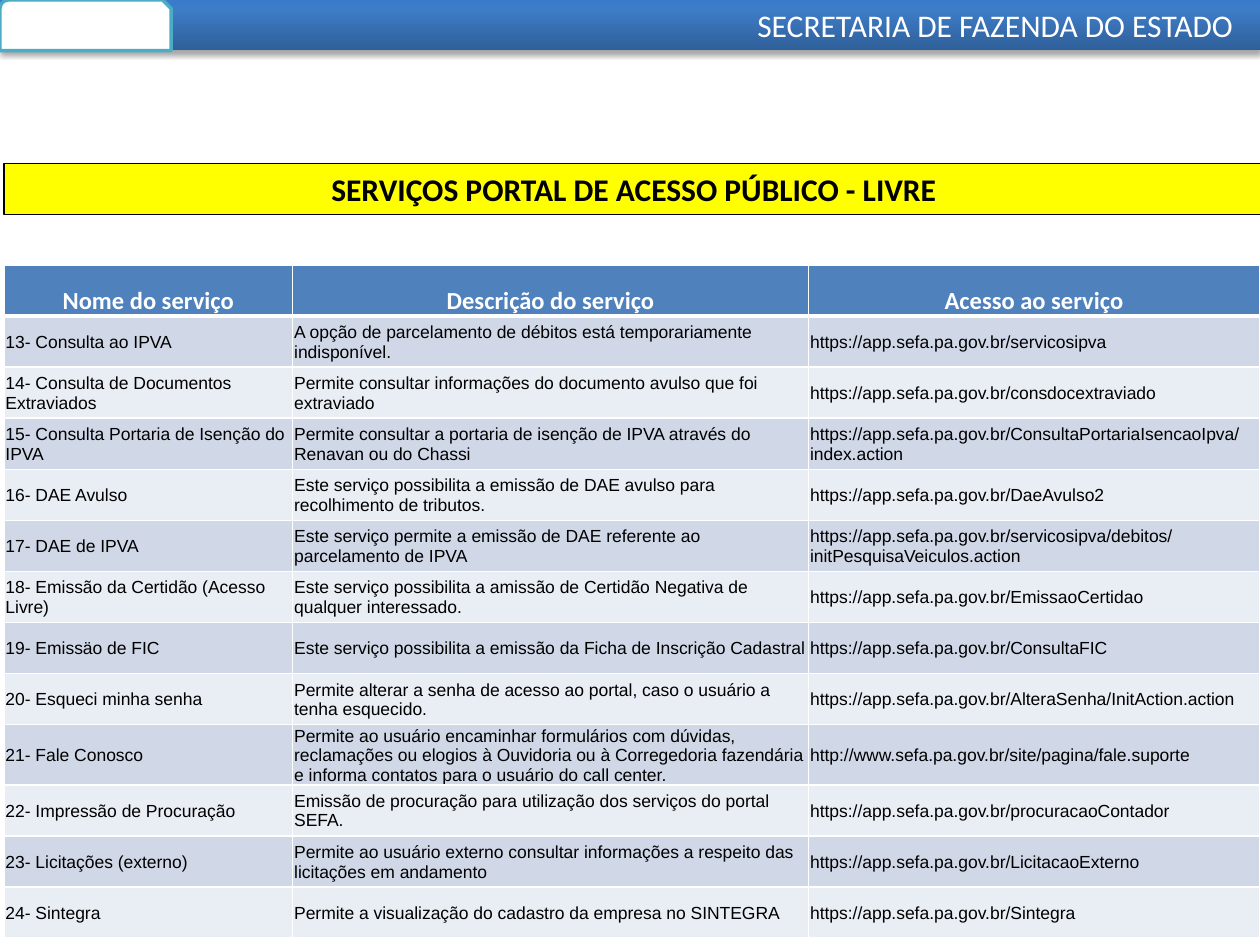
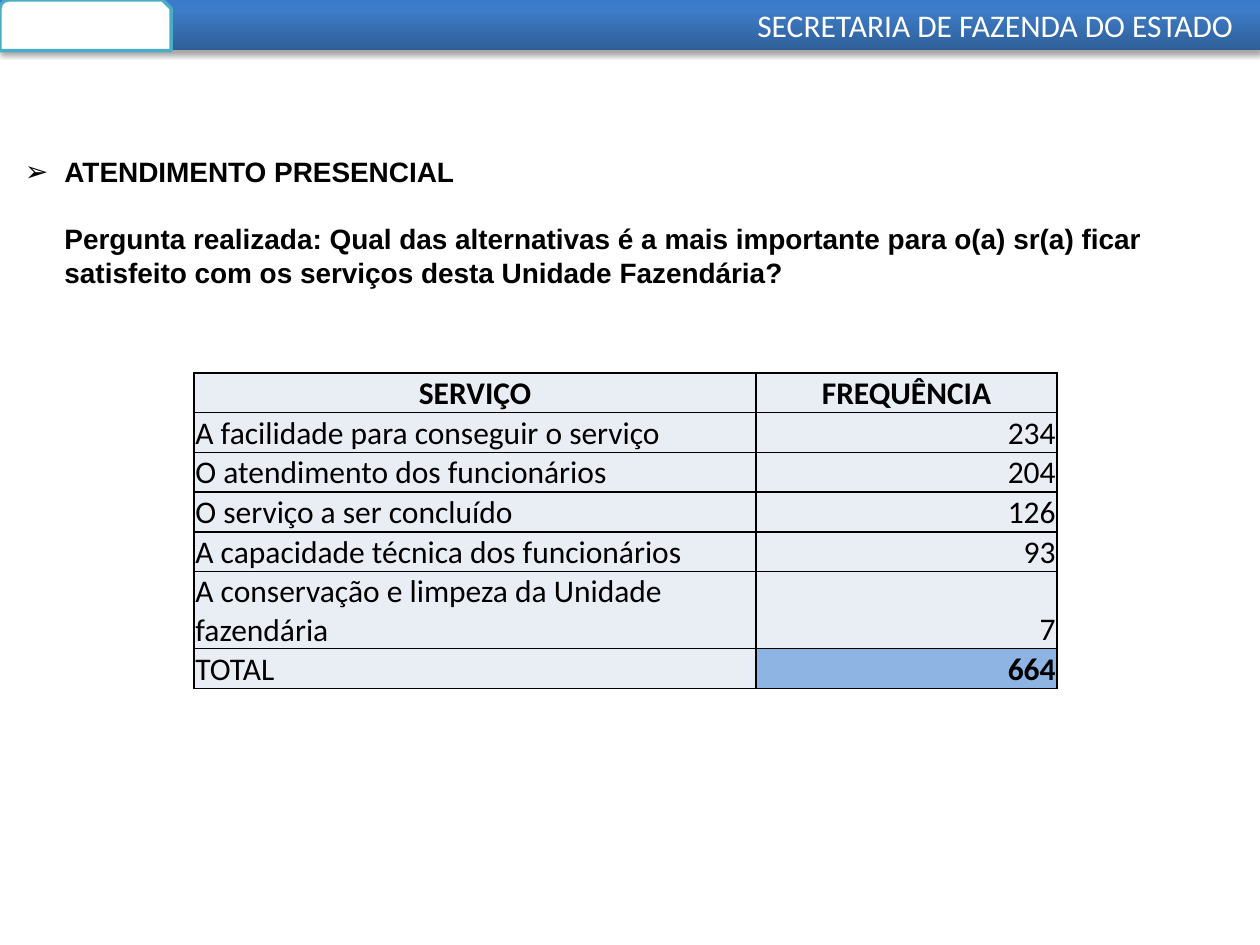
from lxml import etree
from pptx import Presentation
from pptx.dml.color import RGBColor
from pptx.enum.shapes import MSO_SHAPE
from pptx.enum.text import MSO_ANCHOR, PP_ALIGN
from pptx.oxml import parse_xml
from pptx.oxml.ns import nsdecls, qn
from pptx.util import Cm, Pt

RECTANGLE = MSO_SHAPE.RECTANGLE
SNIP_ROUND = MSO_SHAPE.SNIP_ROUND_RECTANGLE
LEFT, CENTER, RIGHT = PP_ALIGN.LEFT, PP_ALIGN.CENTER, PP_ALIGN.RIGHT
TOP, MIDDLE, BOTTOM = MSO_ANCHOR.TOP, MSO_ANCHOR.MIDDLE, MSO_ANCHOR.BOTTOM

COLORS = {
    "white": "FFFFFF",
    "black": "000000",
    "band_dark": "2F5F99",
    "band_mid": "3D7CC7",
    "band_light": "3A7CCB",
    "tab_line": "4BACC6",
    "yellow": "FFFF00",
    "header": "4F81BD",
    "row_dark": "D0D8E8",
    "row_light": "E9EDF4",
    "total": "8EB4E3",
}
SLIDE_WIDTH, SLIDE_HEIGHT = 25.4, 19.05
BAND_HEIGHT = 1.02

SERVICES = [
    ("13- Consulta ao IPVA",
     "A opção de parcelamento de débitos está temporariamente indisponível.",
     "https://app.sefa.pa.gov.br/servicosipva"),
    ("14- Consulta de Documentos Extraviados",
     "Permite consultar informações do documento avulso que foi extraviado",
     "https://app.sefa.pa.gov.br/consdocextraviado"),
    ("15- Consulta Portaria de Isenção do IPVA",
     "Permite consultar a portaria de isenção de IPVA através do Renavan ou do Chassi",
     "https://app.sefa.pa.gov.br/ConsultaPortariaIsencaoIpva/index.action"),
    ("16- DAE Avulso",
     "Este serviço possibilita a emissão de DAE avulso para recolhimento de tributos.",
     "https://app.sefa.pa.gov.br/DaeAvulso2"),
    ("17- DAE de IPVA",
     "Este serviço permite a emissão de DAE referente ao parcelamento de IPVA",
     "https://app.sefa.pa.gov.br/servicosipva/debitos/initPesquisaVeiculos.action"),
    ("18- Emissão da Certidão (Acesso Livre)",
     "Este serviço possibilita a amissão de Certidão Negativa de qualquer interessado.",
     "https://app.sefa.pa.gov.br/EmissaoCertidao"),
    ("19- Emissäo de FIC",
     "Este serviço possibilita a emissão da Ficha de Inscrição Cadastral",
     "https://app.sefa.pa.gov.br/ConsultaFIC"),
    ("20- Esqueci minha senha",
     "Permite alterar a senha de acesso ao portal, caso o usuário a tenha esquecido.",
     "https://app.sefa.pa.gov.br/AlteraSenha/InitAction.action"),
    ("21- Fale Conosco",
     "Permite ao usuário encaminhar formulários com dúvidas, reclamações ou elogios à "
     "Ouvidoria ou à Corregedoria fazendária e informa contatos para o usuário do call center.",
     "http://www.sefa.pa.gov.br/site/pagina/fale.suporte"),
    ("22- Impressão de Procuração",
     "Emissão de procuração para utilização dos serviços do portal SEFA.",
     "https://app.sefa.pa.gov.br/procuracaoContador"),
    ("23- Licitações (externo)",
     "Permite ao usuário externo consultar informações a respeito das licitações em andamento",
     "https://app.sefa.pa.gov.br/LicitacaoExterno"),
    ("24- Sintegra",
     "Permite a visualização do cadastro da empresa no SINTEGRA",
     "https://app.sefa.pa.gov.br/Sintegra"),
]
FREQUENCIES = [
    ("A facilidade para conseguir o serviço", "234"),
    ("O atendimento dos funcionários", "204"),
    ("O serviço a ser concluído", "126"),
    ("A capacidade técnica dos funcionários", "93"),
    ("A conservação e limpeza da Unidade fazendária", "7"),
    ("TOTAL", "664"),
]


def rgb(name):
    return RGBColor.from_string(COLORS[name])


class Deck:
    def __init__(self):
        self.presentation = Presentation()
        self.presentation.slide_width = Cm(SLIDE_WIDTH)
        self.presentation.slide_height = Cm(SLIDE_HEIGHT)
        self.slide = None

    def new_slide(self):
        layout = self.presentation.slide_layouts[6]
        self.slide = self.presentation.slides.add_slide(layout)
        band = self.shape(RECTANGLE, 0, 0, SLIDE_WIDTH, BAND_HEIGHT, "band_mid")
        self.gradient_and_shadow(band)
        band.text_frame.margin_right = Cm(0.54)
        self.fill_text(band.text_frame, "SECRETARIA DE FAZENDA DO ESTADO", 18,
                       color="white", align=RIGHT)
        self.shape(SNIP_ROUND, 0, 0, 3.45, BAND_HEIGHT, "white", "tab_line", 2)

    def shape(self, kind, left, top, width, height, fill, line=None, line_width=0.75):
        shape = self.slide.shapes.add_shape(kind, Cm(left), Cm(top), Cm(width), Cm(height))
        shape.shadow.inherit = False
        shape.fill.solid()
        shape.fill.fore_color.rgb = rgb(fill)
        if line:
            shape.line.color.rgb = rgb(line)
            shape.line.width = Pt(line_width)
        else:
            shape.line.fill.background()
        return shape

    def gradient_and_shadow(self, shape):
        properties = shape._element.spPr
        stops = "".join(
            f'<a:gs pos="{position * 1000}"><a:srgbClr val="{COLORS[name]}"/></a:gs>'
            for position, name in ((0, "band_dark"), (80, "band_mid"), (100, "band_light")))
        gradient = parse_xml(
            f'<a:gradFill {nsdecls("a")} rotWithShape="1"><a:gsLst>{stops}</a:gsLst>'
            '<a:lin ang="16200000" scaled="0"/></a:gradFill>')
        properties.replace(properties.find(qn("a:solidFill")), gradient)
        properties.find(qn("a:effectLst")).append(parse_xml(
            f'<a:outerShdw {nsdecls("a")} blurRad="{Pt(3.1)}" dist="{Pt(1.8)}" dir="5400000" '
            f'rotWithShape="0"><a:srgbClr val="{COLORS["black"]}"><a:alpha val="35000"/>'
            '</a:srgbClr></a:outerShdw>'))

    def fill_text(self, frame, text, size, font="Calibri", color="black", bold=False, align=LEFT):
        frame.word_wrap = True
        self.style(frame.paragraphs[0], text, size, font, color, bold, align)

    def style(self, paragraph, text, size, font, color="black", bold=False, align=LEFT):
        paragraph.text = text
        paragraph.alignment = align
        paragraph.font.size = Pt(size)
        paragraph.font.name = font
        paragraph.font.bold = bold
        paragraph.font.color.rgb = rgb(color)

    def banner(self, text):
        shape = self.shape(RECTANGLE, 0.08, 3.3, SLIDE_WIDTH, BAND_HEIGHT, "yellow", "black")
        self.fill_text(shape.text_frame, text, 18, bold=True, align=CENTER)

    def question(self, topic, text):
        box = self.slide.shapes.add_textbox(Cm(0.25), Cm(3.12), Cm(25.15), Cm(3.4))
        frame = box.text_frame
        frame.word_wrap = True
        frame.vertical_anchor = TOP
        frame.margin_top = 0
        heading, body = frame.paragraphs[0], frame.add_paragraph()
        for paragraph, content in ((heading, topic), (body, text)):
            properties = paragraph._p.get_or_add_pPr()
            properties.set("marL", str(Cm(0.8)))
            if paragraph is heading:
                properties.set("indent", str(-Cm(0.8)))
                etree.SubElement(properties, qn("a:buFont")).set("typeface", "Arial")
                etree.SubElement(properties, qn("a:buChar")).set("char", "➢")
            self.style(paragraph, content, 16, "Arial", bold=True)
            paragraph.line_spacing = Pt(19.2)
        body.space_before = Pt(19.2)

    def table(self, left, top, widths, row_height, rows):
        frame = self.slide.shapes.add_table(
            len(rows), len(widths), Cm(left), Cm(top),
            Cm(sum(widths)), Cm(row_height * len(rows)))
        table = frame.table
        table.horz_banding = False
        for column, width in zip(table.columns, widths):
            column.width = Cm(width)
        for row in table.rows:
            row.height = Cm(row_height)
        return table

    def cell(self, cell, text, fill, anchor, borders, border_color, **text_style):
        cell.margin_left = cell.margin_right = cell.margin_top = Cm(0.03)
        cell.margin_bottom = 0
        cell.vertical_anchor = anchor
        cell.fill.solid()
        cell.fill.fore_color.rgb = rgb(fill)
        properties = cell._tc.get_or_add_tcPr()
        for index, (side, width) in enumerate(zip("LRTB", borders)):
            properties.insert(index, parse_xml(
                f'<a:ln{side} {nsdecls("a")} w="{Pt(width)}"><a:solidFill>'
                f'<a:srgbClr val="{COLORS[border_color]}"/></a:solidFill></a:ln{side}>'))
        self.fill_text(cell.text_frame, text, **text_style)


def services_slide(deck):
    deck.new_slide()
    deck.banner("SERVIÇOS PORTAL DE ACESSO PÚBLICO - LIVRE")
    rows = [("Nome do serviço", "Descrição do serviço", "Acesso ao serviço"), *SERVICES]
    table = deck.table(0.08, 5.34, (5.82, 10.4, 9.09), 1.03, rows)
    for row_index, row in enumerate(rows):
        for column_index, text in enumerate(row):
            cell = table.cell(row_index, column_index)
            if row_index == 0:
                deck.cell(cell, text, "header", BOTTOM, (1, 1, 1, 3), "white",
                          size=14, color="white", bold=True, align=CENTER)
            else:
                fill = "row_dark" if row_index % 2 else "row_light"
                top_border = 3 if row_index == 1 else 1
                deck.cell(cell, text, fill, MIDDLE, (1, 1, top_border, 1), "white",
                          size=10, font="Arial")


def survey_slide(deck):
    deck.new_slide()
    deck.question(
        "ATENDIMENTO PRESENCIAL",
        "Pergunta realizada: Qual das alternativas é a mais importante para o(a) sr(a) "
        "ficar satisfeito com os serviços desta Unidade Fazendária?")
    rows = [("SERVIÇO", "FREQUÊNCIA"), *FREQUENCIES]
    table = deck.table(3.91, 7.52, (11.33, 6.07), 0.8, rows)
    for row_index, row in enumerate(rows):
        for column_index, text in enumerate(row):
            is_header = row_index == 0
            is_total = row_index == len(rows) - 1 and column_index == 1
            align = CENTER if is_header else (LEFT, RIGHT)[column_index]
            deck.cell(table.cell(row_index, column_index), text,
                      "total" if is_total else "row_light", BOTTOM, (1, 1, 1, 1), "black",
                      size=18, bold=is_header or is_total, align=align)


def main():
    deck = Deck()
    services_slide(deck)
    survey_slide(deck)
    deck.presentation.save("out.pptx")


if __name__ == "__main__":
    main()
